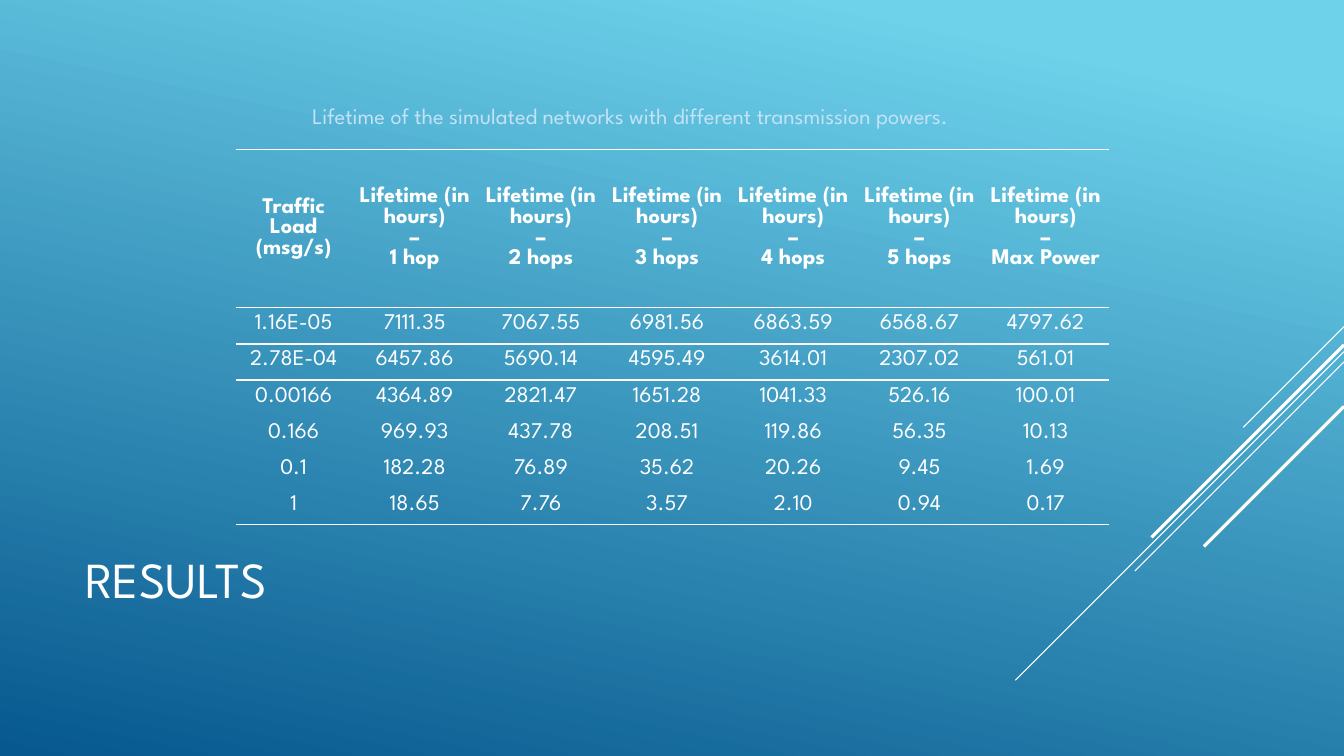
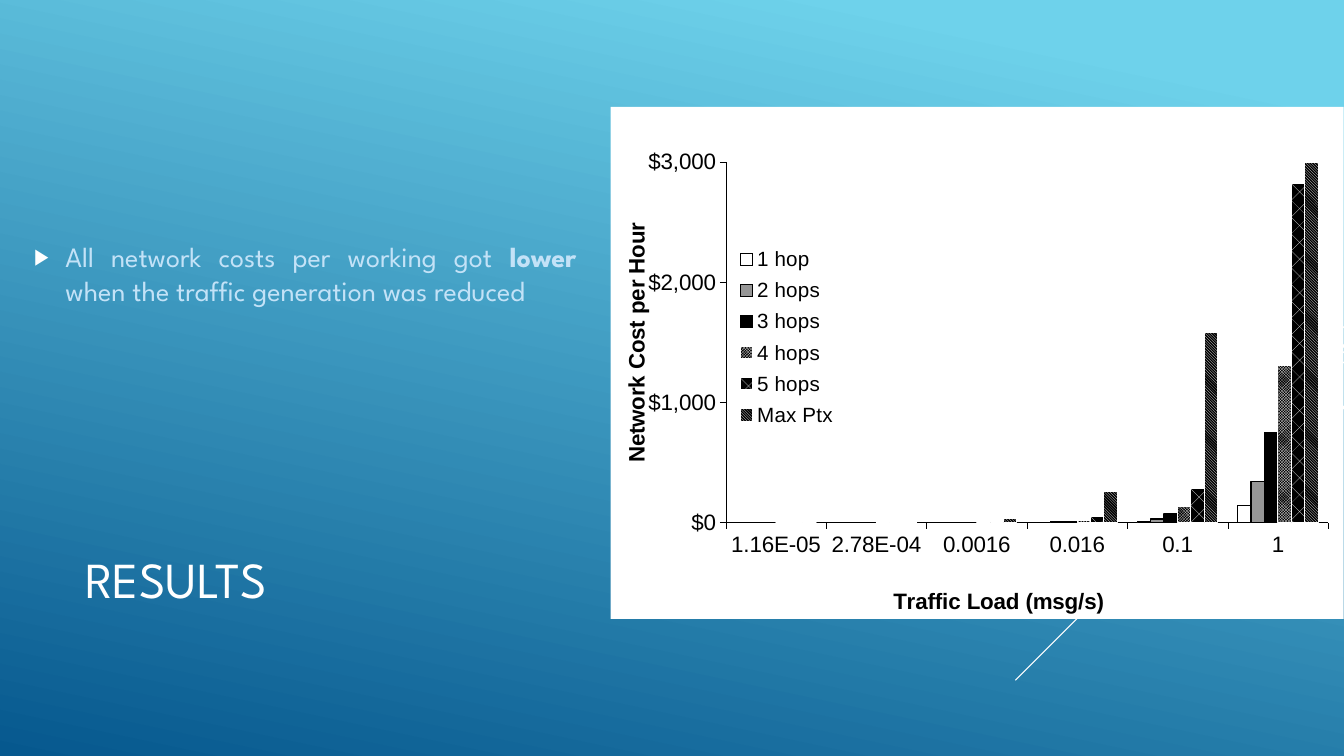
"""Build two result slides: a network lifetime table and a network cost chart."""
from lxml.etree import SubElement
from pptx import Presentation
from pptx.chart.data import CategoryChartData
from pptx.dml.color import RGBColor
from pptx.enum.chart import XL_CHART_TYPE, XL_LEGEND_POSITION, XL_TICK_MARK
from pptx.enum.dml import MSO_PATTERN_TYPE
from pptx.enum.shapes import MSO_CONNECTOR
from pptx.enum.text import MSO_ANCHOR, PP_ALIGN
from pptx.oxml import parse_xml
from pptx.oxml.ns import nsdecls, qn
from pptx.util import Cm, Pt

COLORS = {"sky": "6ED2EB", "deep": "06588E", "white": "FFFFFF",
          "pale": "C3E2F7", "grey": "969696", "black": "000000"}
FONT, CHART_FONT = "League Spartan", "Arial"
NO_STYLE = "{2D5ABB26-0587-4C30-8999-92F81FD0307C}"
WIDTH, HEIGHT = 33.87, 19.05

TITLE = "RESULTS"
TITLE_BOX = (1.9, 12.47, 23.7, 4.19)
DIAGONALS = [(8.23, 2.54, 0.75), (8.86, 8.28, 0.75), (9.12, 5.27, 0.75),
             (8.69, 4.85, 2.25), (10.24, 3.53, 2.25)]

CAPTION = "Lifetime of the simulated networks with different transmission powers."
CAPTION_BOX = (7.62, 2.39, 19.33, 1.02)
POWERS = ["1 hop", "2 hops", "3 hops", "4 hops", "5 hops", "Max Power"]
HEADER = ["Traffic Load (msg/s)"] + [f"Lifetime (in hours)\n–\n{s}" for s in POWERS]
LIFETIMES = [
    ["1.16E-05", "7111.35", "7067.55", "6981.56", "6863.59", "6568.67", "4797.62"],
    ["2.78E-04", "6457.86", "5690.14", "4595.49", "3614.01", "2307.02", "561.01"],
    ["0.00166", "4364.89", "2821.47", "1651.28", "1041.33", "526.16", "100.01"],
    ["0.166", "969.93", "437.78", "208.51", "119.86", "56.35", "10.13"],
    ["0.1", "182.28", "76.89", "35.62", "20.26", "9.45", "1.69"],
    ["1", "18.65", "7.76", "3.57", "2.10", "0.94", "0.17"],
]
TABLE_AT = (5.94, 3.76)
COL_WIDTHS = [2.92] + [3.18] * 6
ROW_HEIGHTS = [3.99] + [0.91] * 6
RULES = {0: {"lnT": 1, "lnB": 1}, 1: {"lnT": 1, "lnB": 1.5},
         2: {"lnT": 1.5}, 6: {"lnB": 1}}

FINDING = [("All network costs per working got ", False), ("lower", True),
           (" when the traffic generation was reduced", False)]
FINDING_BOX = (0.61, 1.88, 14.17, 10.03)

CHART_BOX = (15.39, 2.69, 18.47, 12.95)
LOADS = ["1.16E-05", "2.78E-04", "0.0016", "0.016", "0.1", "1"]
COSTS = [
    ("1 hop", [0, 0, 0, 0, 10, 140], "white"),
    ("2 hops", [0, 0, 0, 10, 30, 340], "grey"),
    ("3 hops", [0, 0, 0, 10, 70, 750], "black"),
    ("4 hops", [0, 0, 0, 20, 130, 1310], MSO_PATTERN_TYPE.SMALL_CHECKER_BOARD),
    ("5 hops", [0, 0, 10, 50, 280, 2820], MSO_PATTERN_TYPE.DOTTED_DIAMOND),
    ("Max Ptx", [0, 0, 30, 260, 1580, 15760], MSO_PATTERN_TYPE.DARK_DOWNWARD_DIAGONAL),
]
VALUE_SCALE = {"minimum_scale": 0, "maximum_scale": 3000, "major_unit": 1000}


def rgb(name):
    return RGBColor.from_string(COLORS[name])


def apply(obj, **values):
    for name, value in values.items():
        setattr(obj, name, value)


def style(font, size, color, name=FONT, bold=False):
    apply(font, size=Pt(size), name=name, bold=bold)
    font.color.rgb = rgb(color)


def stroke(line, color, width):
    line.color.rgb = rgb(color)
    line.width = Pt(width)


def add_text(s, box, runs, size, color):
    tf = s.shapes.add_textbox(*map(Cm, box)).text_frame
    apply(tf, word_wrap=True, vertical_anchor=MSO_ANCHOR.MIDDLE)
    p = tf.paragraphs[0]
    for text, bold in runs:
        r = p.add_run()
        r.text = text
        style(r.font, size, color, bold=bold)
    return p


def add_slide(prs):
    s = prs.slides.add_slide(prs.slide_layouts[6])
    fill = s.background.fill
    fill.gradient()
    fill.gradient_angle = 258
    for stop, position, color in zip(fill.gradient_stops, (0.1, 1), ("sky", "deep")):
        stop.position = position
        stop.color.rgb = rgb(color)
    for top, run, width in DIAGONALS:
        ends = (WIDTH, top, WIDTH - run, top + run)
        line = s.shapes.add_connector(MSO_CONNECTOR.STRAIGHT, *map(Cm, ends))
        stroke(line.line, "white", width)
        SubElement(line._element.spPr, qn("a:effectLst"))
    add_text(s, TITLE_BOX, [(TITLE, False)], 36, "white")
    return s


def add_rules(cell, rules):
    tcPr = cell._tc.get_or_add_tcPr()
    for i, (tag, width) in enumerate(rules.items()):
        tcPr.insert(i, parse_xml(
            f'<a:{tag} {nsdecls("a")} w="{Pt(width)}"><a:solidFill>'
            f'<a:srgbClr val="{COLORS["white"]}"/></a:solidFill></a:{tag}>'))


def add_lifetimes(s):
    rows = [HEADER] + LIFETIMES
    size = (sum(COL_WIDTHS), sum(ROW_HEIGHTS))
    frame = s.shapes.add_table(len(rows), len(HEADER), *map(Cm, TABLE_AT + size))
    table = frame.table
    apply(table, first_row=False, horz_banding=False)
    table._tbl.tblPr.find(qn("a:tableStyleId")).text = NO_STYLE
    for col, width in zip(table.columns, COL_WIDTHS):
        col.width = Cm(width)
    for i, (row, height) in enumerate(zip(table.rows, ROW_HEIGHTS)):
        row.height = Cm(height)
        for cell, text in zip(row.cells, rows[i]):
            apply(cell, text=text, vertical_anchor=MSO_ANCHOR.MIDDLE,
                  margin_left=Cm(0.18), margin_right=Cm(0.18),
                  margin_top=0, margin_bottom=0)
            cell.fill.background()
            add_rules(cell, RULES.get(i, {}))
            for p in cell.text_frame.paragraphs:
                p.alignment = PP_ALIGN.CENTER
                if i:
                    p.line_spacing = Pt(13)
                style(p.runs[0].font, 16, "white", bold=i == 0)


def add_bullet(p):
    apply(p, alignment=PP_ALIGN.JUSTIFY, space_before=Pt(4), space_after=Pt(6))
    pPr = p._p.get_or_add_pPr()
    apply_indent = {"marL": Cm(0.79), "indent": -Cm(0.79)}
    for name, value in apply_indent.items():
        pPr.set(name, str(value))
    color = SubElement(pPr, qn("a:buClr"))
    SubElement(color, qn("a:srgbClr"), val=COLORS["white"])
    SubElement(pPr, qn("a:buSzPct"), val="80000")
    SubElement(pPr, qn("a:buFont"), typeface=CHART_FONT)
    SubElement(pPr, qn("a:buChar"), char="▶")


def place(parent, index, **fractions):
    for old in parent.findall(qn("c:layout")):
        parent.remove(old)
    inner = '<c:layoutTarget val="inner"/>' if index == 0 else ""
    modes = "".join(f'<c:{k}Mode val="edge"/>' for k in fractions if k in "xy")
    values = "".join(f'<c:{k} val="{v}"/>' for k, v in fractions.items())
    parent.insert(index, parse_xml(
        f'<c:layout {nsdecls("c")}><c:manualLayout>{inner}{modes}{values}'
        '</c:manualLayout></c:layout>'))


def format_axis(axis, title, x, y):
    apply(axis, has_major_gridlines=False, major_tick_mark=XL_TICK_MARK.OUTSIDE)
    stroke(axis.format.line, "black", 0.25)
    style(axis.tick_labels.font, 16, "black", CHART_FONT)
    tf = axis.axis_title.text_frame
    tf.text = title
    style(tf.paragraphs[0].runs[0].font, 16, "black", CHART_FONT, True)
    place(axis.axis_title._element, 1, x=x, y=y)
    return tf


def add_costs(s):
    data = CategoryChartData()
    data.categories = LOADS
    for name, values, _ in COSTS:
        data.add_series(name, values)
    chart = s.shapes.add_chart(
        XL_CHART_TYPE.COLUMN_CLUSTERED, *map(Cm, CHART_BOX), data).chart
    style(chart.font, 16, "black", CHART_FONT)
    apply(chart, has_title=False, has_legend=True)
    space = chart._chartSpace
    space.find(qn("c:chart")).addnext(parse_xml(
        f'<c:spPr {nsdecls("c", "a")}><a:solidFill><a:srgbClr val="{COLORS["white"]}"/>'
        '</a:solidFill><a:ln><a:noFill/></a:ln></c:spPr>'))
    place(space.find(f'.//{qn("c:plotArea")}'), 0, x=0.157, y=0.108, w=0.822, h=0.704)

    plot = chart.plots[0]
    apply(plot, gap_width=150, overlap=0, vary_by_categories=False)
    for series, (_, _, look) in zip(plot.series, COSTS):
        fill = series.format.fill
        if look in COLORS:
            fill.solid()
            fill.fore_color.rgb = rgb(look)
            stroke(series.format.line, "black", 1)
        else:
            fill.patterned()
            fill.pattern = look
            fill.fore_color.rgb, fill.back_color.rgb = rgb("white"), rgb("black")
            stroke(series.format.line, "white", 0.75)

    format_axis(chart.category_axis, "Traffic Load (msg/s)", 0.38, 0.93)
    tf = format_axis(chart.value_axis, "Network Cost per Hour", 0.01, 0.22)
    tf._txBody.bodyPr.set("rot", "-5400000")
    tf._txBody.bodyPr.set("vert", "horz")
    apply(chart.value_axis, **VALUE_SCALE)
    apply(chart.value_axis.tick_labels, number_format="[$$-409]#,##0",
          number_format_is_linked=False)

    legend = chart.legend
    apply(legend, position=XL_LEGEND_POSITION.RIGHT, include_in_layout=False)
    style(legend.font, 14.7, "black", CHART_FONT)
    place(legend._element, 1, x=0.16, y=0.26, w=0.16, h=0.38)


def main():
    prs = Presentation()
    apply(prs, slide_width=Cm(WIDTH), slide_height=Cm(HEIGHT))
    s = add_slide(prs)
    add_lifetimes(s)
    add_text(s, CAPTION_BOX, [(CAPTION, False)], 16, "pale")
    s = add_slide(prs)
    add_bullet(add_text(s, FINDING_BOX, FINDING, 20, "pale"))
    add_costs(s)
    prs.save("out.pptx")


if __name__ == "__main__":
    main()
